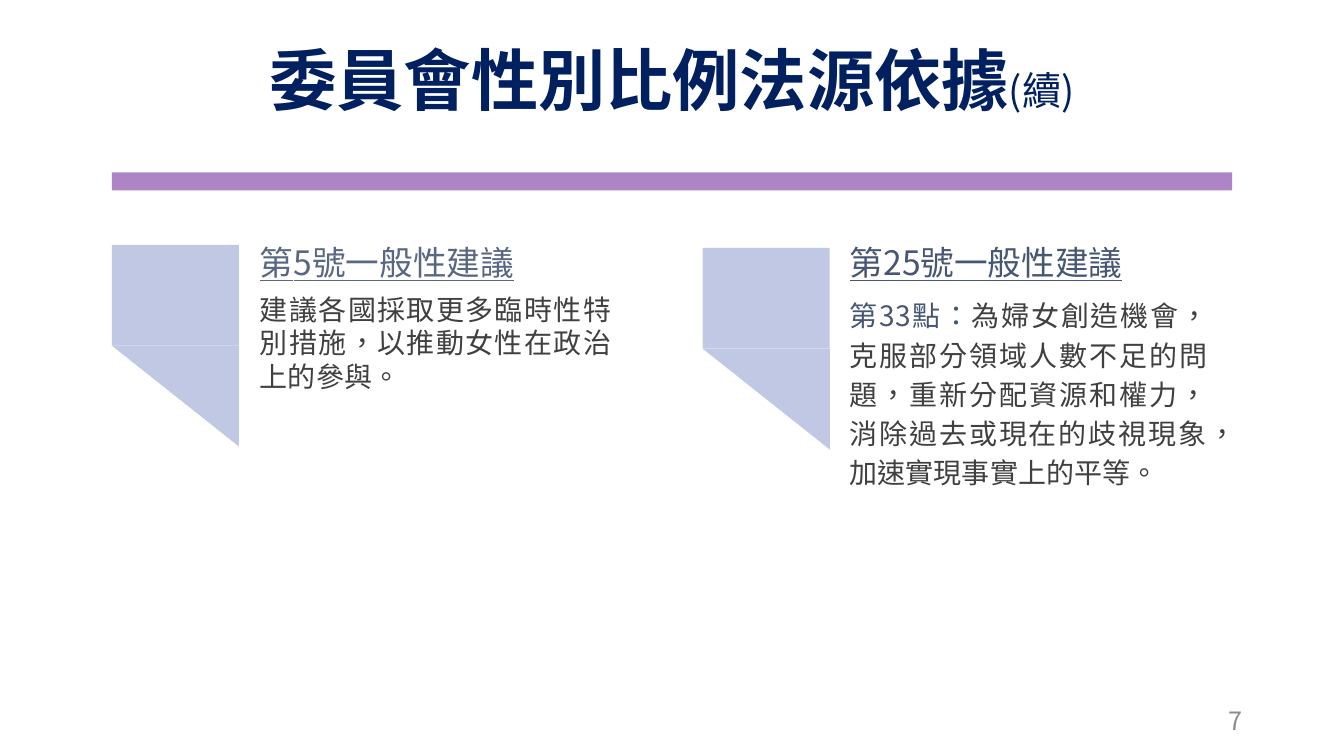
from dataclasses import dataclass

from lxml import etree
from pptx import Presentation
from pptx.dml.color import RGBColor
from pptx.enum import lang, shapes, text
from pptx.oxml import ns
from pptx.util import Inches, Pt


@dataclass(frozen=True)
class Theme:
    font: str = "Noto Sans CJK SC"
    navy: str = "002060"
    purple: str = "AD84C6"
    lilac: str = "C1C8E4"
    slate_light: str = "596782"
    slate: str = "465673"
    body: str = "404040"
    grey: str = "8C8C8C"
    title_size: int = 48
    suffix_size: int = 28
    heading_size: int = 24
    body_size: int = 20
    number_size: int = 18


THEME = Theme()
ALIGN = text.PP_ALIGN


def set_attributes(target, values):
    for name, value in values.items():
        setattr(target, name, value)


def add_span(para, wording, size, color, **style):
    span = para.add_run()
    span.text = wording
    set_attributes(span.font, {
        "name": THEME.font,
        "size": Pt(size),
        "language_id": lang.MSO_LANGUAGE_ID.TRADITIONAL_CHINESE,
        **style,
    })
    span.font.color.rgb = RGBColor.from_string(color)
    # East Asian characters take their typeface from a separate element.
    latin = span.font._element.find(ns.qn("a:latin"))
    east_asian = etree.Element(ns.qn("a:ea"), typeface=THEME.font)
    latin.addnext(east_asian)


def add_text(page, place, spans, para_format=None, frame_format=None):
    """Add a one-paragraph box; each span is (wording, size, color, style)."""
    box = page.shapes.add_textbox(*map(Inches, place))
    set_attributes(box.text_frame, {"word_wrap": True, **(frame_format or {})})
    para = box.text_frame.paragraphs[0]
    set_attributes(para, para_format or {})
    for wording, size, color, style in spans:
        add_span(para, wording, size, color, **style)


def add_block(page, kind, place, color):
    block = page.shapes.add_shape(kind, *map(Inches, place))
    block.shadow.inherit = False
    block.fill.solid()
    block.fill.fore_color.rgb = RGBColor.from_string(color)
    block.line.fill.background()
    return block


def add_ribbon(page, left, top):
    """Add a square-cut flag whose lower half slopes to the right."""
    width, height = 1.26, 1
    add_block(page, shapes.MSO_SHAPE.RECTANGLE,
              (left, top, width, height), THEME.lilac)
    tail = add_block(page, shapes.MSO_SHAPE.ISOSCELES_TRIANGLE,
                     (left, top + height, width, height), THEME.lilac)
    tail.adjustments[0] = 0
    tail.rotation = 180


def add_recommendation(page, ribbon, heading, heading_place, heading_color,
                       body_spans, body_place, body_format):
    add_ribbon(page, *ribbon)
    grow = {"auto_size": text.MSO_AUTO_SIZE.SHAPE_TO_FIT_TEXT}
    spans = [(wording, THEME.body_size, color, {}) for wording, color in body_spans]
    add_text(page, body_place, spans,
             {"alignment": ALIGN.JUSTIFY, **body_format}, grow)
    add_text(page, heading_place,
             [(heading, THEME.heading_size, heading_color, {"underline": True})],
             frame_format=grow)


def main():
    deck = Presentation()
    set_attributes(deck, {"slide_width": Inches(13.33), "slide_height": Inches(7.5)})
    page = deck.slides.add_slide(deck.slide_layouts[6])
    middle = {"vertical_anchor": text.MSO_ANCHOR.MIDDLE}

    add_text(page, (0, 0.41, 13.33, 0.84), [
        ("委員會性別比例法源依據", THEME.title_size, THEME.navy, {"bold": True}),
        ("(續)", THEME.suffix_size, THEME.navy, {"bold": False}),
    ], {"alignment": ALIGN.CENTER, "line_spacing": 0.9}, middle)
    add_text(page, (9.42, 6.95, 3, 0.4),
             [("7", THEME.number_size, THEME.grey, {})],
             {"alignment": ALIGN.RIGHT}, middle)

    add_recommendation(
        page, (1.11, 2.43),
        "第5號一般性建議", (2.48, 2.35, 4.36, 0.5), THEME.slate_light,
        [("建議各國採取更多臨時性特別措施，以推動女性在政治上的參與。", THEME.body)],
        (2.48, 2.85, 3.68, 1.11), {})
    add_recommendation(
        page, (6.97, 2.46),
        "第25號一般性建議", (8.33, 2.35, 3.88, 0.5), THEME.slate,
        [("第33點：", THEME.slate),
         ("為婦女創造機會，克服部分領域人數不足的問題，重新分配資源和權力，"
          "消除過去或現在的歧視現象，加速實現事實上的平等。", THEME.body)],
        (8.33, 2.86, 3.75, 2.06), {"line_spacing": Pt(28)})

    add_block(page, shapes.MSO_SHAPE.RECTANGLE,
              (1.11, 1.71, 11.11, 0.18), THEME.purple)
    deck.save("out.pptx")


if __name__ == "__main__":
    main()
